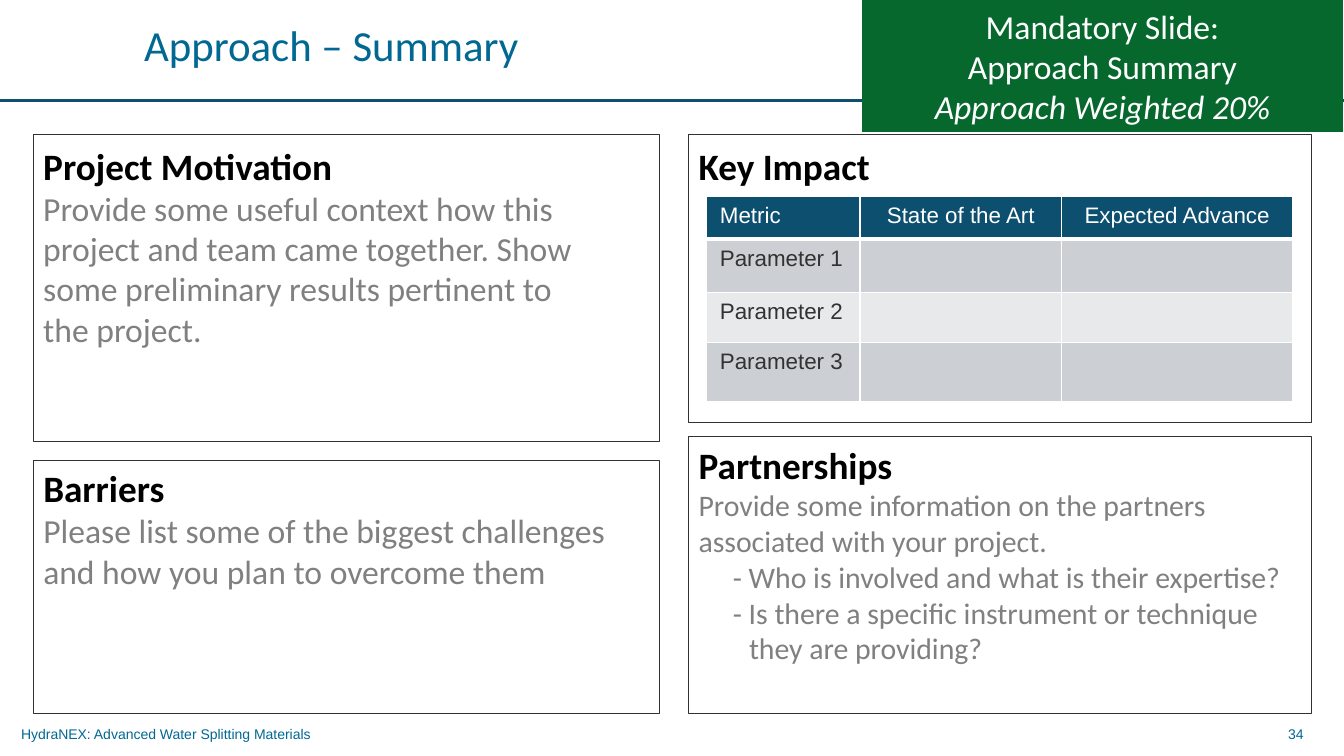
"""Build the approach summary slide."""
import pptx
import pptx.dml.color
import pptx.enum.shapes
import pptx.enum.text
import pptx.oxml
import pptx.oxml.ns
import pptx.util

W, H = 13.33, 7.5
LEFT, RIGHT = 2.48, 51.24
LEFT_W, RIGHT_W = 46.59, 46.36
COLORS = {
    "navy": "0C4F6F", "blue": "006892", "green": "07682E", "white": "FFFFFF",
    "black": "000000", "gray": "808080", "dark": "323232",
    "band": "CCD0D5", "pale": "E7E9EB",
}
ALIGN = pptx.enum.text.PP_ALIGN
ANCHOR = pptx.enum.text.MSO_ANCHOR
Inches = pptx.util.Inches
Pt = pptx.util.Pt


def rgb(name):
    """Return a named colour."""
    return pptx.dml.color.RGBColor.from_string(COLORS[name])


def area(x, y, w, h):
    """Turn percentages of the slide into lengths."""
    return [Inches(v * size / 100) for v, size in ((x, W), (y, H), (w, W), (h, H))]


def style(p, size, color, bold=None, italic=None, font="Calibri", align=None):
    """Format a paragraph and its runs."""
    p.alignment = align
    for r in p.runs:
        r.font.name, r.font.size = font, Pt(size)
        r.font.bold, r.font.italic = bold, italic
        r.font.color.rgb = rgb(color)


def add_text(s, box, lines, grow=True):
    """Add a text box from (text, format) pairs and return its frame."""
    tf = s.shapes.add_textbox(*area(*box)).text_frame
    tf.word_wrap = True
    if grow:
        tf.auto_size = pptx.enum.text.MSO_AUTO_SIZE.SHAPE_TO_FIT_TEXT
    fill_frame(tf, lines)
    return tf


def fill_frame(tf, lines):
    """Write formatted lines into a text frame."""
    tf.text = "\n".join(text for text, _ in lines)
    for p, (_, look) in zip(tf.paragraphs, lines):
        style(p, **look)


def add_rect(s, box, fill=None, line=None):
    """Add a plain rectangle."""
    sp = s.shapes.add_shape(pptx.enum.shapes.MSO_SHAPE.RECTANGLE, *area(*box))
    sp.shadow.inherit = False
    if fill:
        sp.fill.solid()
        sp.fill.fore_color.rgb = rgb(fill)
    else:
        sp.fill.background()
    if line:
        sp.line.color.rgb = rgb(line)
        sp.line.width = Pt(0.75)
    else:
        sp.line.fill.background()
    return sp


def add_rule(s, y):
    """Add the line under the title."""
    x, top, w, _ = area(0, y, 100, 0)
    ln = s.shapes.add_connector(pptx.enum.shapes.MSO_CONNECTOR.STRAIGHT, x, top, w, top)
    ln.line.color.rgb = rgb("navy")
    ln.line.width = Pt(2)
    ln._element.spPr.append(pptx.oxml.parse_xml(
        f'<a:effectLst {pptx.oxml.ns.nsdecls("a")}/>'))


def add_section(s, box, text_box, heading, body=(), size=24):
    """Add a framed section with a heading and grey guidance, return its frame."""
    lines = [(heading, dict(size=26.6, color="black", bold=True))]
    lines += [(text, dict(size=size, color="gray", bold=False)) for text in body]
    tf = add_text(s, text_box, lines)
    add_rect(s, box, line="dark")
    return tf


def set_borders(cell, bottom):
    """Give a cell white borders."""
    tcPr = cell._tc.get_or_add_tcPr()
    for i, (side, width) in enumerate(zip("LRTB", (1, 1, 1, bottom))):
        tcPr.insert(i, pptx.oxml.parse_xml(
            f'<a:ln{side} {pptx.oxml.ns.nsdecls("a")} w="{Pt(width)}"><a:solidFill>'
            f'<a:srgbClr val="{COLORS["white"]}"/></a:solidFill></a:ln{side}>'))


def add_metrics(s, box, rows, widths, heights):
    """Add the metrics table."""
    table = s.shapes.add_table(len(rows), len(widths), *area(*box)).table
    for col, width in zip(table.columns, widths):
        col.width = Inches(width)
    for i, (row, height) in enumerate(zip(rows, heights)):
        table.rows[i].height = Inches(height)
        fill = "navy" if i == 0 else ("pale", "band")[i % 2]
        for j, text in enumerate(row):
            cell = table.cell(i, j)
            cell.fill.solid()
            cell.fill.fore_color.rgb = rgb(fill)
            set_borders(cell, 1 if i else 3)
            cell.margin_left = cell.margin_right = Inches(0.13)
            cell.margin_top = cell.margin_bottom = Inches(0.07)
            cell.text_frame.text = text
            style(cell.text_frame.paragraphs[0], 16, "dark" if i else "white",
                  False, font="Arial", align=ALIGN.CENTER if j else None)


def add_footer(s, x, w, text, align):
    """Add one footer text."""
    look = dict(size=10, color="blue", font="Arial", align=align)
    p = add_text(s, (x, 95.6, w, 3.47), [(text, look)], grow=False).paragraphs[0]
    p.line_spacing = 0.9
    p.space_before = Pt(2)


def main():
    """Build and save the slide."""
    prs = pptx.Presentation()
    prs.slide_width, prs.slide_height = Inches(W), Inches(H)
    s = prs.slides.add_slide(prs.slide_layouts[6])

    add_footer(s, 0.83, 79.67, "HydraNEX: Advanced Water Splitting Materials", ALIGN.LEFT)
    add_footer(s, 59.94, 37.8, "34", ALIGN.RIGHT)
    add_rule(s, 13.33)
    title = add_text(s, (9.98, 0, 81.7, 13.33),
                     [("Approach – Summary", dict(size=30.6, color="blue"))], grow=False)
    title.vertical_anchor = ANCHOR.MIDDLE
    title.paragraphs[0].line_spacing = Pt(28)

    add_section(s, (LEFT, 17.73, LEFT_W, 40.67), (LEFT, 18.27, 40.81, 28.8),
                "Project Motivation",
                ["Provide some useful context how this project and team came together. "
                 "Show some preliminary results pertinent to the project."])
    add_section(s, (RIGHT, 17.73, RIGHT_W, 38.13), (RIGHT, 18.27, RIGHT_W, 7.33),
                "Key Impact")
    partners = add_section(
        s, (RIGHT, 57.73, RIGHT_W, 36.67), (RIGHT, 57.87, RIGHT_W, 31.2), "Partnerships",
        ["Provide some information on the partners associated with your project.",
         "- Who is involved and what is their expertise?",
         "- Is there a specific instrument or technique they are providing?"], 21.3)
    for p in partners.paragraphs[2:]:
        pPr = p._p.get_or_add_pPr()
        pPr.set("marL", str(Inches(0.5)))
        pPr.set("indent", str(Inches(-0.16)))
    add_section(s, (LEFT, 60.93, LEFT_W, 33.47), (LEFT, 60.93, LEFT_W, 23.47), "Barriers",
                ["Please list some of the biggest challenges and how you plan to "
                 "overcome them"])

    rows = [("Metric", "State of the Art", "Expected Advance")]
    rows += [(f"Parameter {n}", "", "") for n in (1, 2, 3)]
    add_metrics(s, (52.59, 26, 43.59, 27.2), rows, (1.52, 2, 2.29), (0.42, 0.53, 0.5, 0.58))

    banner = add_rect(s, (64.14, 0, 35.78, 17.47), fill="green")
    look = dict(size=24, color="white", align=ALIGN.CENTER)
    fill_frame(banner.text_frame, [("Mandatory Slide:", look), ("Approach Summary", look),
                                   ("Approach Weighted 20%", dict(look, italic=True))])
    banner.text_frame.vertical_anchor = ANCHOR.MIDDLE
    prs.save("out.pptx")


if __name__ == "__main__":
    main()
